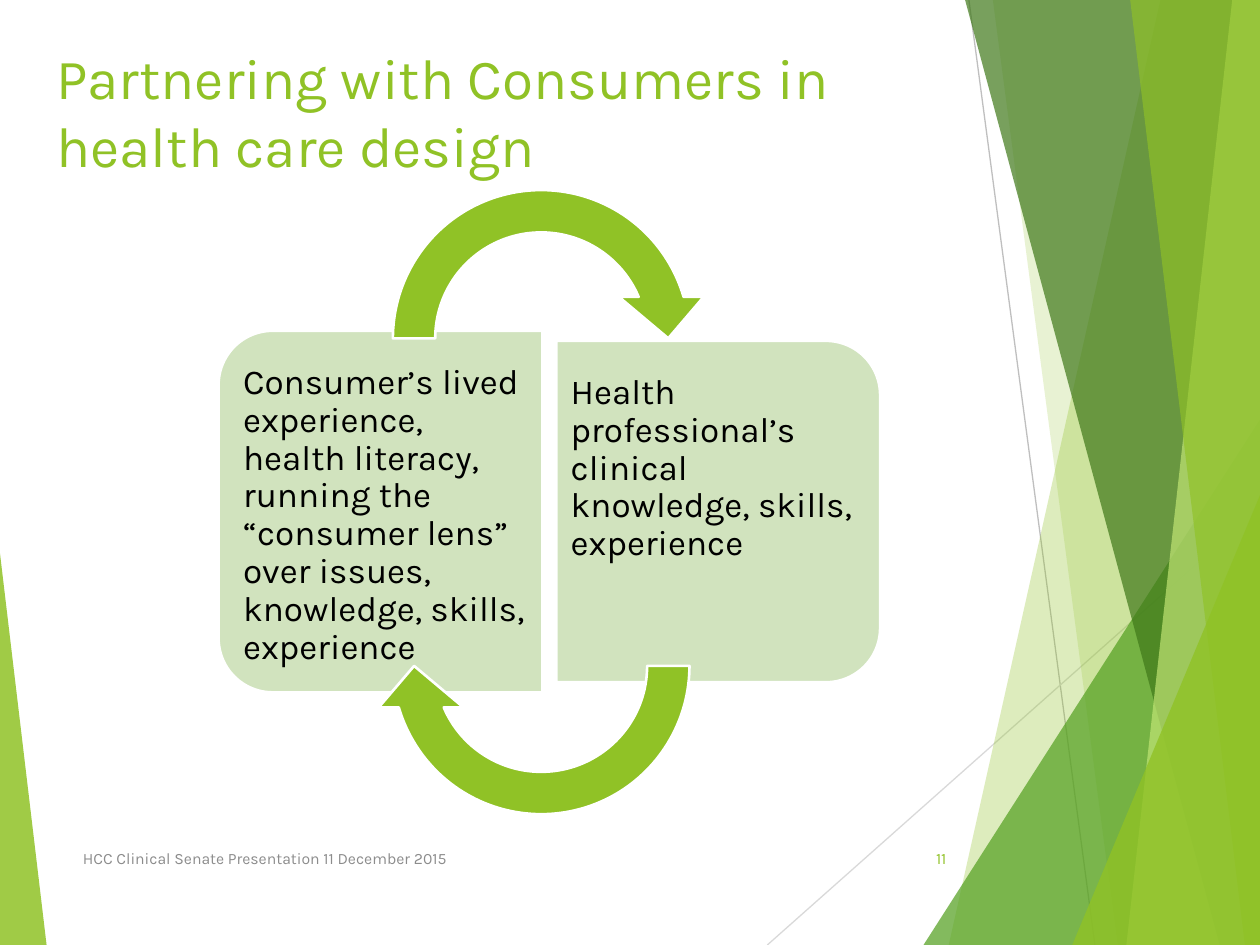
from lxml.etree import SubElement
from pptx import Presentation
from pptx.dml.color import RGBColor
from pptx.enum.shapes import MSO_CONNECTOR, MSO_SHAPE
from pptx.enum.text import MSO_ANCHOR, PP_ALIGN
from pptx.oxml.ns import qn
from pptx.util import Inches, Pt

WIDTH, HEIGHT = 10, 7.5
FONT = "Karla"
LIME = RGBColor(0x90, 0xC2, 0x26)
PALE_LIME = RGBColor(0xC0, 0xE4, 0x74)
GREEN = RGBColor(0x54, 0xA0, 0x21)
FOREST = RGBColor(0x3F, 0x78, 0x19)
SAGE = RGBColor(0xD1, 0xE3, 0xBE)
GREY = RGBColor(0x8C, 0x8C, 0x8C)
MID_GREY = RGBColor(0xBF, 0xBF, 0xBF)
LIGHT_GREY = RGBColor(0xD9, 0xD9, 0xD9)
BLACK = RGBColor(0, 0, 0)
WHITE = RGBColor(0xFF, 0xFF, 0xFF)

# Content
TITLE = "Partnering with Consumers in health care design"
FOOTER = "HCC Clinical Senate Presentation 11 December 2015"
PAGE = "11"
# text, text box, inner left and right margins, panel centre, panel size, rotation
PANELS = [
    ("Consumer’s lived experience, health literacy, running the “consumer lens” "
     "over issues, knowledge, skills, experience",
     (1.85, 2.75, 2.44, 2.62), (0.08, 0.12), 3.02, (2.87, 2.57), 270),
    ("Health professional’s clinical knowledge, skills, experience",
     (4.41, 2.83, 2.44, 2.46), (0.12, 0.08), 5.7, (2.71, 2.57), 90),
]
PANEL_MIDDLE = 4.06
ARROW_LEFT, ARROW_SIZE = 2.95, 2.69
ARROWS = [(1.34, 0), (3.94, 180)]  # top, rotation
ARROW_ADJUSTMENTS = (0.125, 11.423, 204.577, 108, 0.125)

# Decoration, back to front
RULES = [((7.69, 0), (8.69, HEIGHT), MID_GREY), ((WIDTH, 4.03), (6.09, HEIGHT), LIGHT_GREY)]
# Bands reach the right edge: x at top, x at bottom, colour, opacity
BANDS_BEHIND = [(9.21, 7.53, LIME, 30), (7.88, 8.87, LIME, 20)]
BANDS_FRONT = [(7.66, 9.68, FOREST, 70), (9.78, 8.94, PALE_LIME, 70), (8.97, 9.88, LIME, 65)]
# Wedges stand on the bottom edge: left, top, width, apex share, colour, opacity
WEDGE_MIDDLE = (7.33, 3.33, 2.67, 1, GREEN, 72)
WEDGES_FRONT = [(8.51, 3.93, 1.49, 1, LIME, 80), (0, 4.39, 0.37, 0, LIME, 85)]

deck = Presentation()
deck.slide_width, deck.slide_height = Inches(WIDTH), Inches(HEIGHT)
slide = deck.slides.add_slide(deck.slide_layouts[6])
shapes = slide.shapes


def paint(shape, color, opacity=100, outline=None):
    shape.shadow.inherit = False
    shape.fill.solid()
    shape.fill.fore_color.rgb = color
    if opacity < 100:
        tint = shape.fill._xPr.find(qn("a:solidFill"))[0]
        SubElement(tint, qn("a:alpha"), val=str(opacity * 1000))
    if outline is None:
        shape.line.fill.background()
    else:
        shape.line.color.rgb = outline
        shape.line.width = Pt(1.5)


def add_preset(kind, box, adjustments, rotation=0, **look):
    shape = shapes.add_shape(kind, *map(Inches, box))
    for index, value in enumerate(adjustments):
        shape.adjustments[index] = value
    shape.rotation = rotation
    paint(shape, **look)


def add_rule(start, end, color):
    rule = shapes.add_connector(MSO_CONNECTOR.STRAIGHT, *map(Inches, start + end))
    rule.line.color.rgb = color
    rule.line.width = Pt(0.75)
    SubElement(rule._element.spPr, qn("a:effectLst"))


def add_band(top_x, bottom_x, color, opacity):
    corners = [(top_x, 0), (WIDTH, 0), (WIDTH, HEIGHT), (bottom_x, HEIGHT)]
    points = [(Inches(x), Inches(y)) for x, y in corners]
    outline = shapes.build_freeform(*points[0])
    outline.add_line_segments(points[1:], close=True)
    paint(outline.convert_to_shape(), color, opacity)


def add_wedge(left, top, width, apex, color, opacity):
    add_preset(MSO_SHAPE.ISOSCELES_TRIANGLE, (left, top, width, HEIGHT - top), [apex],
               color=color, opacity=opacity)


def add_text(text, box, size, color, align=PP_ALIGN.LEFT, anchor=MSO_ANCHOR.TOP,
             sides=(0.1, 0.1), ends=0.05, spacing=None):
    frame = shapes.add_textbox(*map(Inches, box)).text_frame
    frame.word_wrap = True
    frame.vertical_anchor = anchor
    frame.margin_left, frame.margin_right = map(Inches, sides)
    frame.margin_top = frame.margin_bottom = Inches(ends)
    paragraph = frame.paragraphs[0]
    paragraph.alignment = align
    paragraph.line_spacing = spacing
    run = paragraph.add_run()
    run.text = text
    run.font.name, run.font.size = FONT, Pt(size)
    run.font.color.rgb = color


# Background decoration
for rule in RULES:
    add_rule(*rule)
for band in BANDS_BEHIND:
    add_band(*band)
add_wedge(*WEDGE_MIDDLE)
for band in BANDS_FRONT:
    add_band(*band)
for wedge in WEDGES_FRONT:
    add_wedge(*wedge)

# Title and footer
add_text(TITLE, (0.35, 0.29, 7.46, 1), 32.4, LIME)
add_text(FOOTER, (0.56, 6.61, 5.17, 0.4), 9, GREY, anchor=MSO_ANCHOR.MIDDLE)
add_text(PAGE, (7.05, 6.61, 0.56, 0.4), 9, LIME, align=PP_ALIGN.RIGHT,
         anchor=MSO_ANCHOR.MIDDLE)

# Two panels, each turned so that its rounded side faces outwards
for text, text_box, sides, centre, (length, depth), rotation in PANELS:
    panel_box = (centre - length / 2, PANEL_MIDDLE - depth / 2, length, depth)
    add_preset(MSO_SHAPE.ROUND_2_SAME_RECTANGLE, panel_box, (0.167, 0), rotation,
               color=SAGE, outline=WHITE)
    add_text(text, text_box, 20, BLACK, sides=sides, ends=0.14, spacing=0.9)

# Arrows closing the cycle
for top, rotation in ARROWS:
    add_preset(MSO_SHAPE.CIRCULAR_ARROW, (ARROW_LEFT, top, ARROW_SIZE, ARROW_SIZE),
               ARROW_ADJUSTMENTS, rotation, color=LIME, outline=WHITE)

deck.save("out.pptx")
